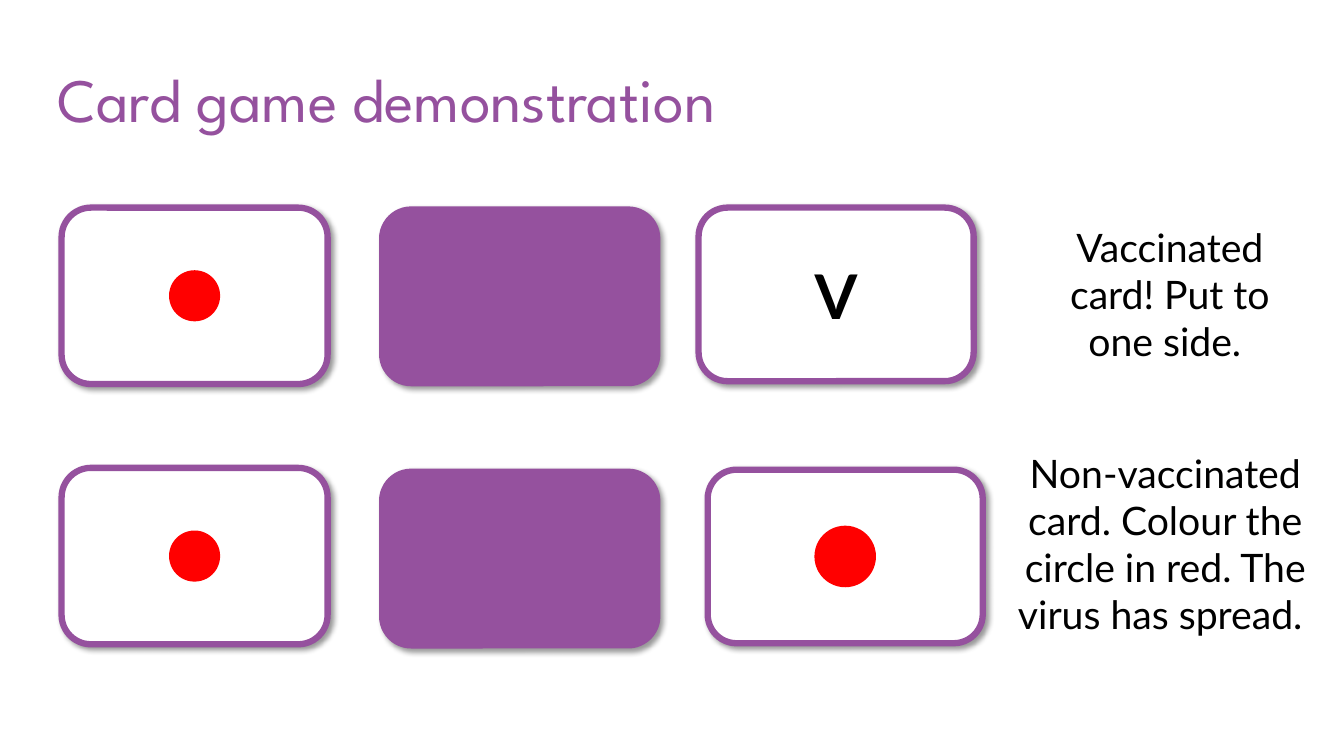
from lxml import etree
from pptx import Presentation
from pptx import util as u
from pptx.dml.color import RGBColor
from pptx.enum import shapes, text
from pptx.oxml.ns import qn


def rgb(hex_color):
    return RGBColor.from_string(hex_color)


class CardSlide:
    purple, white, red, black = "95519E", "FFFFFF", "FF0000", "000000"
    body_font, title_font = "Lato", "League Spartan"

    def __init__(self, prs):
        self.s = prs.slides.add_slide(prs.slide_layouts[5])

    def place(self, sp, x, y, w, h):
        sp.left, sp.top, sp.width, sp.height = map(u.Pt, (x, y, w, h))

    def set_text(self, sp, words, size, color, font, align, bold=False):
        tf = sp.text_frame
        tf.word_wrap = True
        p = tf.paragraphs[0]
        p.text = words
        p.alignment = align
        p.font.size = u.Pt(size)
        p.font.name = font
        p.font.bold = bold
        p.font.color.rgb = rgb(color)
        return p

    def title(self, words, x, y, w, h):
        sp = self.s.shapes.title
        self.place(sp, x, y, w, h)
        sp.text_frame.vertical_anchor = text.MSO_ANCHOR.MIDDLE
        p = self.set_text(sp, words, 44, self.purple, self.title_font, text.PP_ALIGN.LEFT)
        p.line_spacing = 0.9

    def shadow(self, sp):
        sp.shadow.inherit = False
        effects = sp._element.spPr.find(qn("a:effectLst"))
        outer = etree.SubElement(
            effects, qn("a:outerShdw"), blurRad=str(u.Pt(4)), dist=str(u.Pt(3)),
            dir="2700000", algn="tl", rotWithShape="0")
        color = etree.SubElement(outer, qn("a:srgbClr"), val=self.black)
        etree.SubElement(color, qn("a:alpha"), val="40000")

    def card(self, x, y, w, h, fill, letter="", parent=None):
        sp = (parent or self.s).shapes.add_shape(
            shapes.MSO_SHAPE.ROUNDED_RECTANGLE, *map(u.Pt, (x, y, w, h)))
        sp.fill.solid()
        sp.fill.fore_color.rgb = rgb(fill)
        sp.line.color.rgb = rgb(self.purple)
        sp.line.width = u.Pt(4.5)
        self.shadow(sp)
        if letter:
            sp.text_frame.vertical_anchor = text.MSO_ANCHOR.MIDDLE
            self.set_text(sp, letter, 44, self.black, self.body_font,
                          text.PP_ALIGN.CENTER, bold=True)

    def dot_card(self, x, y, w, h, diameter):
        group = self.s.shapes.add_group_shape()
        self.card(x, y, w, h, self.white, parent=group)
        corner = x + (w - diameter) / 2, y + (h - diameter) / 2
        sp = group.shapes.add_shape(
            shapes.MSO_SHAPE.OVAL, *map(u.Pt, (*corner, diameter, diameter)))
        sp.fill.solid()
        sp.fill.fore_color.rgb = rgb(self.red)
        sp.line.fill.background()
        sp.shadow.inherit = False

    def note(self, words, x, y, w, h):
        sp = self.s.shapes.add_textbox(*map(u.Pt, (x, y, w, h)))
        self.set_text(sp, words, 28, self.black, self.body_font, text.PP_ALIGN.CENTER)


def main():
    prs = Presentation()
    prs.slide_width, prs.slide_height = u.Pt(960), u.Pt(540)
    slide = CardSlide(prs)
    slide.title("Card game demonstration", 34, 21, 828, 104)

    card_w, card_h = 196.5, 124
    for dealt_y, back_y in ((148.3, 149.7), (334.2, 337)):
        slide.dot_card(44, dealt_y, 190, 126, 36.5)
        slide.card(273, back_y, card_w, card_h, slide.purple)

    slide.card(499, 148.3, card_w, card_h, slide.white, letter="V")
    slide.dot_card(505.5, 335.5, card_w, card_h, 44)

    slide.note("Vaccinated card! Put to one side. ", 733.7, 156.2, 203.8, 109)
    slide.note("Non-vaccinated card. Colour the circle in red. The virus has spread. ",
               715.7, 317.5, 233.3, 143)
    prs.save("out.pptx")


if __name__ == "__main__":
    main()
